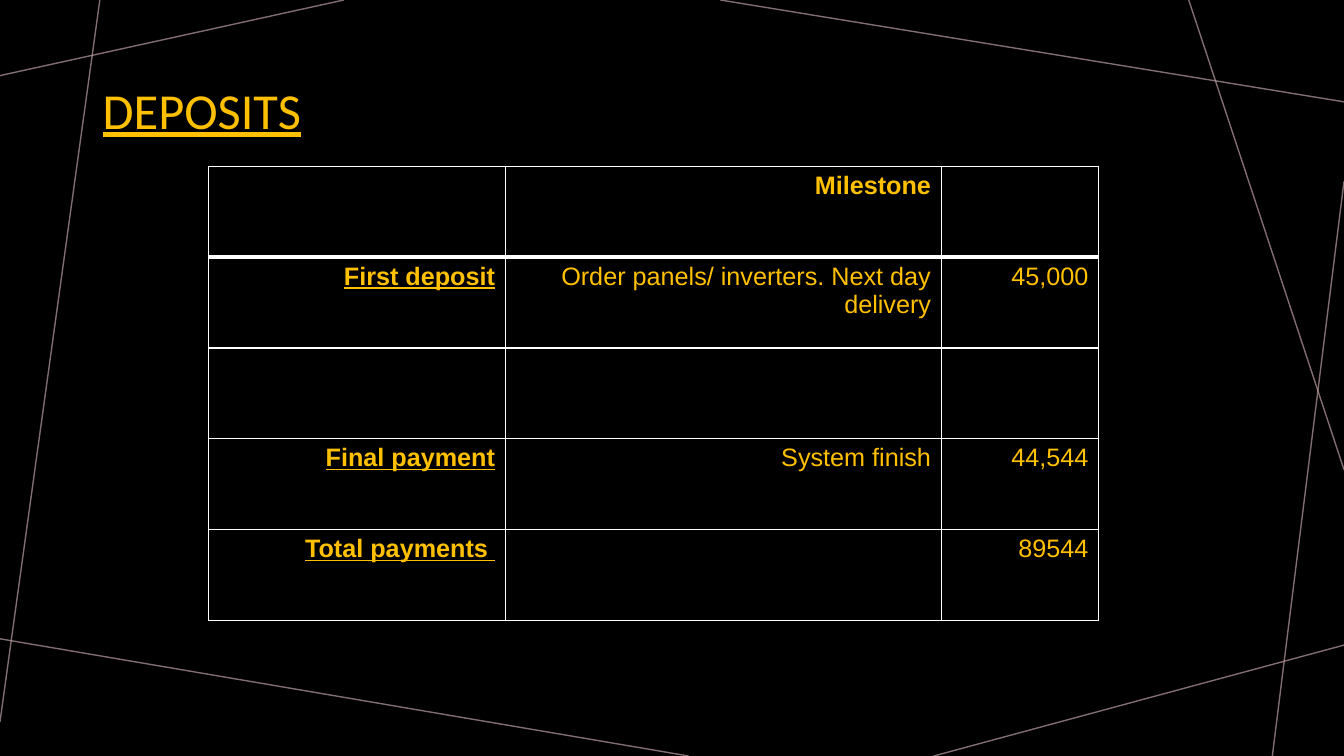
"""Build the deposits slide: a payment table framed by thin crossing lines."""
from lxml import etree
from pptx import Presentation
from pptx import util as u
from pptx.dml.color import RGBColor
from pptx.enum import shapes, text
from pptx.oxml.ns import qn

GOLD, WHITE, BLACK, ROSE = "FFC000", "FFFFFF", "000000", "BA9CA0"


def colour(value):
    return RGBColor.from_string(value)


def write(frame, words, font="Arial", size=18, color=GOLD, bold=False,
          underline=False, align=text.PP_ALIGN.RIGHT, spacing=1.0):
    paragraph = frame.paragraphs[0]
    paragraph.alignment = align
    paragraph.line_spacing = spacing
    run = paragraph.add_run()
    run.text = words
    run.font.name = font
    run.font.size = u.Pt(size)
    run.font.bold = bold
    run.font.underline = underline
    run.font.color.rgb = colour(color)


presentation = Presentation()
presentation.slide_width = u.Inches(13.33)
presentation.slide_height = u.Inches(7.5)
column = presentation.slide_width / 100
row = presentation.slide_height / 100
slide = presentation.slides.add_slide(presentation.slide_layouts[6])
slide.background.fill.solid()
slide.background.fill.fore_color.rgb = colour(BLACK)

frame_lines = [
    (25.58, 0, 0, 10),
    (7.43, 0, 0, 95.47),
    (51.24, 100, 0, 84.5),
    (100, 85.33, 69.47, 100),
    (100, 24, 94.67, 100),
    (100, 62.13, 88.45, 0),
    (100, 13.47, 53.6, 0),
]
for x1, y1, x2, y2 in frame_lines:
    ends = map(round, (x1 * column, y1 * row, x2 * column, y2 * row))
    line = slide.shapes.add_connector(shapes.MSO_CONNECTOR.STRAIGHT, *ends)
    line.line.width = u.Pt(1)
    line.line.color.rgb = colour(ROSE)
    properties = line._element.spPr
    tint = properties.find(".//" + qn("a:srgbClr"))
    etree.SubElement(tint, qn("a:alpha"), val="70000")
    etree.SubElement(properties, qn("a:effectLst"))

place = map(round, (6.9 * column, 5.33 * row, 86.27 * column, 19.33 * row))
title = slide.shapes.add_textbox(*place).text_frame
title.word_wrap = True
title.vertical_anchor = text.MSO_ANCHOR.MIDDLE
write(title, "DEPOSITS", font="Calibri", size=36, underline=True,
      align=text.PP_ALIGN.LEFT, spacing=0.9)

payments = [
    ("", "Milestone", ""),
    ("First deposit", "Order panels/ inverters. Next day delivery", "45,000"),
    ("", "", ""),
    ("Final payment", "System finish", "44,544"),
    ("Total payments ", "", "89544"),
]
column_widths = [22.06, 32.44, 11.7]
row_height = 12.02
place = map(round, (15.53 * column, 22 * row, sum(column_widths) * column,
                    len(payments) * row_height * row))
table = slide.shapes.add_table(len(payments), len(column_widths), *place).table
for table_column, width in zip(table.columns, column_widths):
    table_column.width = round(width * column)

for r, record in enumerate(payments):
    for c, words in enumerate(record):
        cell = table.cell(r, c)
        for side in "LRTB":
            heavy = (r, side) in ((0, "B"), (1, "T"))
            border = etree.SubElement(cell._tc.get_or_add_tcPr(), qn("a:ln" + side),
                                      w=str(u.Pt(3 if heavy else 1)))
            fill = etree.SubElement(border, qn("a:solidFill"))
            etree.SubElement(fill, qn("a:srgbClr"), val=WHITE)
        cell.fill.background()
        if words:
            write(cell.text_frame, words, bold=r == 0 or c == 0, underline=c == 0)

presentation.save("out.pptx")
